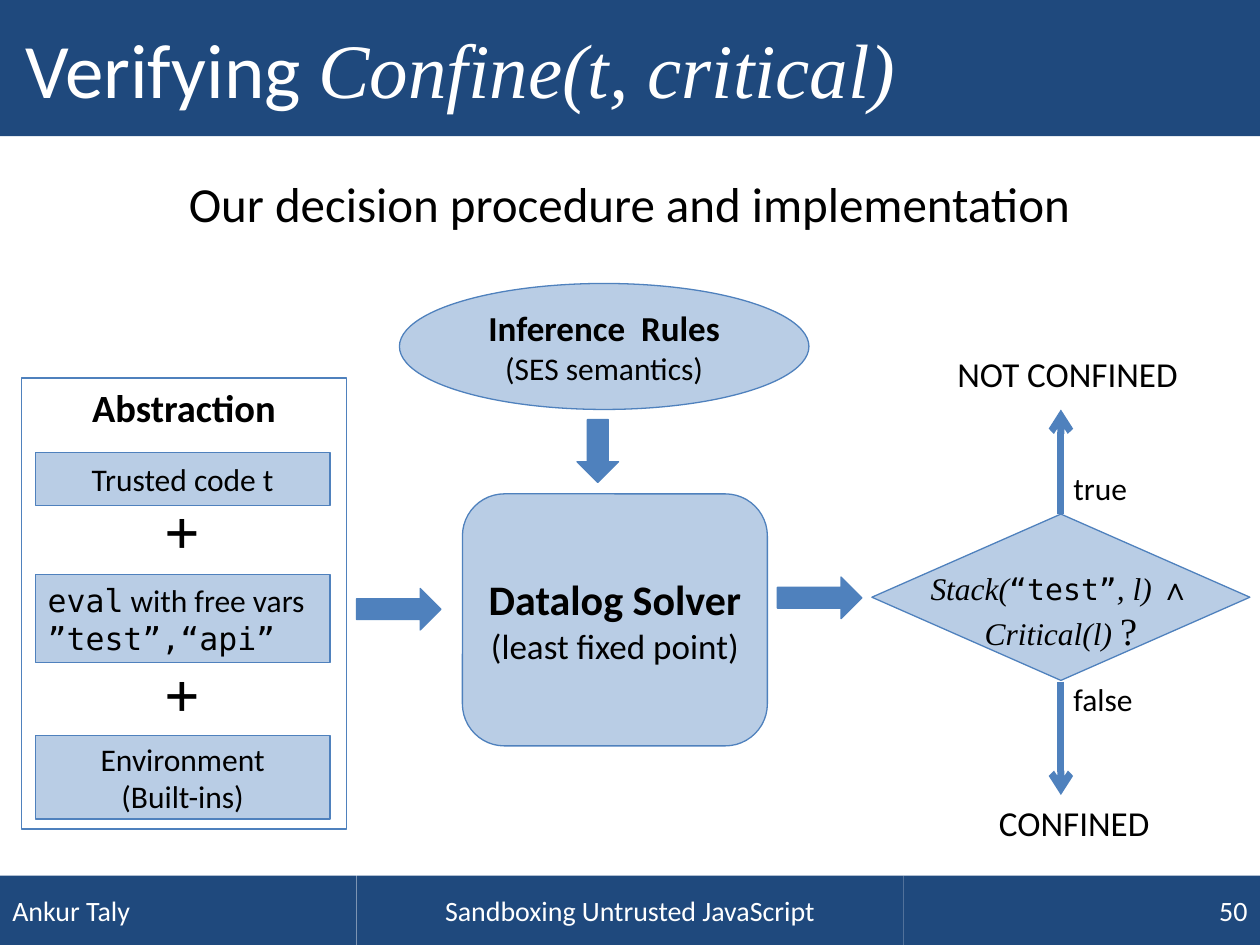
from lxml import etree
from pptx import Presentation
from pptx.dml.color import RGBColor
from pptx.enum import shapes, text
from pptx.oxml import ns
from pptx.util import Inches, Pt

NAVY, BLUE, PALE = "1F497D", "4F81BD", "B9CDE5"
WHITE, BLACK = "FFFFFF", "000000"
SANS, MONO, SERIF = "Calibri", "DejaVu Sans Mono", "Times New Roman"
LEFT, CENTER, RIGHT = text.PP_ALIGN.LEFT, text.PP_ALIGN.CENTER, text.PP_ALIGN.RIGHT
SHAPE = shapes.MSO_SHAPE


def rgb(value):
    return RGBColor.from_string(value)


def box(left, top, width, height):
    return [Inches(v) for v in (left, top, width, height)]


def run(content, size, font=SANS, bold=False, italic=False):
    return content, size, font, bold, italic


def write(sp, paragraphs, align=CENTER, color=BLACK, anchor=text.MSO_ANCHOR.MIDDLE):
    tf = sp.text_frame
    tf.word_wrap = True
    tf.auto_size = text.MSO_AUTO_SIZE.NONE
    tf.vertical_anchor = anchor
    for i, runs in enumerate(paragraphs):
        p = tf.add_paragraph() if i else tf.paragraphs[0]
        p.alignment = align
        for content, size, font, bold, italic in runs:
            r = p.add_run()
            r.text = content
            r.font.size = Pt(size)
            r.font.name = font
            r.font.bold = bold
            r.font.italic = italic
            r.font.color.rgb = rgb(color)


def add_shape(s, kind, at, fill=PALE, line=BLUE):
    sp = s.shapes.add_shape(kind, *box(*at))
    sp.shadow.inherit = False
    if fill:
        sp.fill.solid()
        sp.fill.fore_color.rgb = rgb(fill)
    else:
        sp.fill.background()
    if line:
        sp.line.color.rgb = rgb(line)
        sp.line.width = Pt(0.75)
    else:
        sp.line.fill.background()
    return sp


def add_label(s, at, paragraphs, align=LEFT):
    sp = s.shapes.add_textbox(*box(*at))
    write(sp, paragraphs, align, anchor=text.MSO_ANCHOR.TOP)


def add_arrow(s, x, start, end):
    line = s.shapes.add_connector(
        shapes.MSO_CONNECTOR.STRAIGHT, Inches(x), Inches(start), Inches(x), Inches(end))
    line.line.color.rgb = rgb(BLUE)
    line.line.width = Pt(4)
    etree.SubElement(line.line._get_or_add_ln(), ns.qn("a:tailEnd"), type="arrow")
    etree.SubElement(line._element.spPr, ns.qn("a:effectLst"))


def add_title(s):
    title = s.shapes.title
    title.left, title.top, title.width, title.height = box(0, 0, 10, 1.08)
    title.fill.solid()
    title.fill.fore_color.rgb = rgb(NAVY)
    title.text_frame.margin_left = Inches(0.2)
    write(title, [[run("Verifying ", 44),
                   run("Confine(t, critical)", 44, SERIF, italic=True)]], LEFT, WHITE)


def add_footer(s):
    for left, width, content, align in (
            (0, 2.83, "Ankur Taly", LEFT),
            (2.83, 4.34, "Sandboxing Untrusted JavaScript", CENTER),
            (7.17, 2.83, "50", RIGHT)):
        sp = add_shape(s, SHAPE.RECTANGLE, (left, 6.95, width, 0.55), NAVY, None)
        write(sp, [[run(content, 16)]], align, WHITE)


def add_abstraction(s):
    add_shape(s, SHAPE.RECTANGLE, (0.17, 3, 2.58, 3.58), None)
    add_label(s, (0.17, 3, 2.58, 0.47), [[run("Abstraction", 22, bold=True)]], CENTER)
    parts = (
        (3.59, 0.42, CENTER, [[run("Trusted code t", 18)]]),
        (4.56, 0.7, LEFT, [[run("eval", 18, MONO), run(" with free vars ", 18),
                            run("”test”,“api”", 18, MONO)]]),
        (5.84, 0.66, CENTER, [[run("Environment", 18)], [run("(Built-ins)", 18)]]))
    for top, height, align, paragraphs in parts:
        sp = add_shape(s, SHAPE.RECTANGLE, (0.28, top, 2.34, height))
        write(sp, paragraphs, align)
    for top in (3.88, 5.18):
        add_label(s, (0.28, top, 2.34, 0.64), [[run("+", 32, MONO)]], CENTER)


def add_solver(s):
    rules = add_shape(s, SHAPE.OVAL, (3.17, 2.25, 3.25, 1))
    write(rules, [[run("Inference  Rules ", 20, bold=True), run("(SES semantics)", 18)]])
    solver = add_shape(s, SHAPE.FLOWCHART_ALTERNATE_PROCESS, (3.67, 3.92, 2.42, 2))
    write(solver, [[run("Datalog Solver", 24, bold=True)],
                   [run("(least fixed point) ", 20)]])
    add_shape(s, SHAPE.DOWN_ARROW, (4.58, 3.33, 0.33, 0.5), BLUE)
    for left, top in ((2.83, 4.67), (6.17, 4.58)):
        add_shape(s, SHAPE.RIGHT_ARROW, (left, top, 0.67, 0.33), BLUE)


def add_decision(s):
    add_shape(s, SHAPE.FLOWCHART_DECISION, (6.92, 4.08, 3, 1.32))
    add_label(s, (6.92, 4.47, 3, 0.77), [
        [run("Stack(", 18, SERIF, italic=True), run("“test”", 17, MONO),
         run(", l)", 18, SERIF, italic=True), run(" ∧", 18, SERIF)],
        [run("Critical(l) ", 18, SERIF, italic=True), run("?", 22, SERIF)]], CENTER)
    add_arrow(s, 8.42, 4.08, 3.25)
    add_arrow(s, 8.42, 5.41, 6.31)
    for left, top, width, height, content, size in (
            (7.5, 2.75, 2.58, 0.44, "NOT CONFINED", 20),
            (7.83, 6.31, 2.58, 0.44, "CONFINED", 20),
            (8.42, 3.67, 0.83, 0.4, "true", 18),
            (8.42, 5.35, 0.83, 0.4, "false", 18)):
        add_label(s, (left, top, width, height), [[run(content, size)]])


def main():
    prs = Presentation()
    prs.slide_width, prs.slide_height = Inches(10), Inches(7.5)
    s = prs.slides.add_slide(prs.slide_layouts[5])
    add_title(s)
    add_footer(s)
    add_label(s, (0.08, 1.33, 9.83, 0.57),
              [[run("Our decision procedure and implementation", 28)]], CENTER)
    add_abstraction(s)
    add_solver(s)
    add_decision(s)
    prs.save("out.pptx")


if __name__ == "__main__":
    main()
